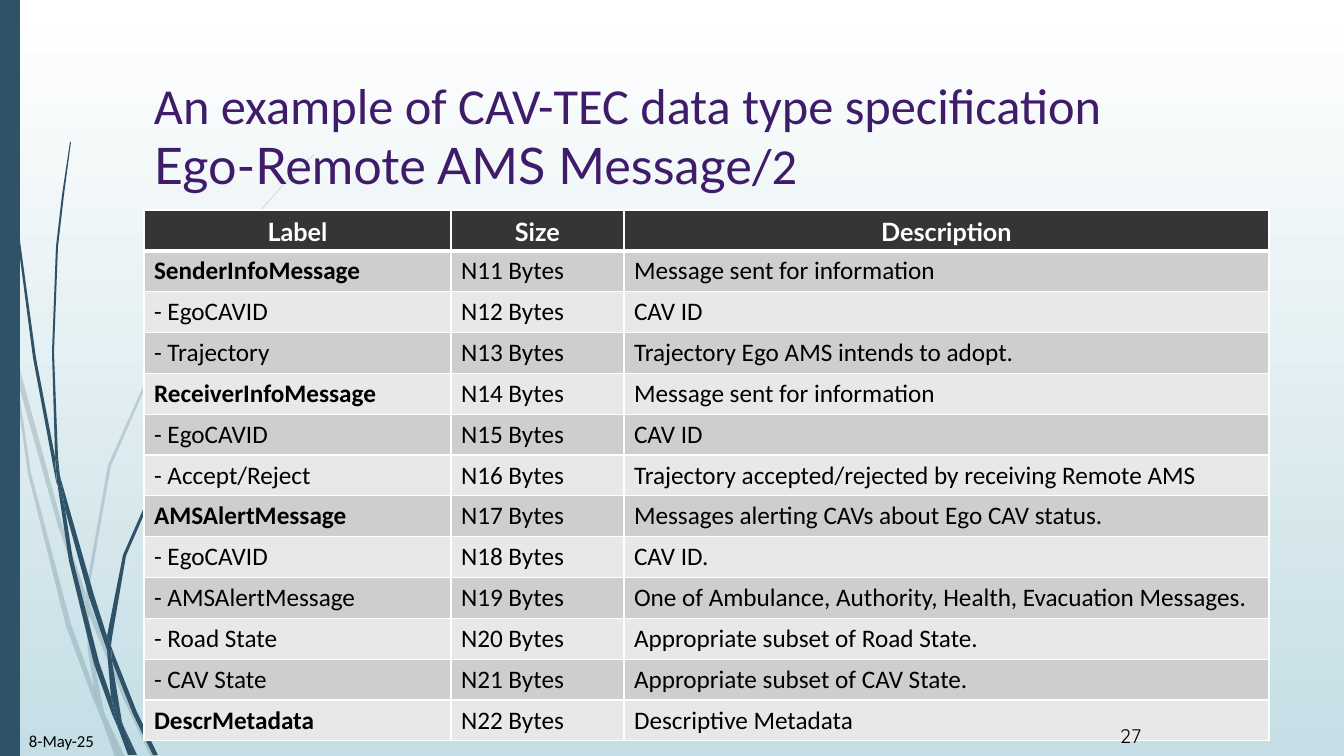
from lxml.etree import SubElement
from pptx import Presentation
from pptx.dml.color import RGBColor
from pptx.enum.shapes import MSO_SHAPE
from pptx.enum.text import MSO_ANCHOR, PP_ALIGN
from pptx.oxml import parse_xml
from pptx.oxml.ns import nsdecls, qn
from pptx.util import Pt

PX = 914400 / 100.8
THEME = {
    "teal": "2E5369", "sky": "C5DEE5", "white": "FFFFFF", "black": "000000",
    "title": "3F1C6A", "header": "353535", "bands": ("CECECE", "E8E8E8"),
    "body_font": "Calibri", "head_font": "Lato", "number_font": "Quicksand",
    "title_size": 36, "table_size": 18, "date_size": 12, "number_size": 14,
}


def px(length):
    return round(length * PX)


def style(span, font, size, color, bold=False):
    span.font.name = font
    span.font.size = Pt(size)
    span.font.bold = bold
    span.font.color.rgb = RGBColor.from_string(color)


deck = Presentation()
deck.slide_width, deck.slide_height = px(1344), px(756)
page = deck.slides.add_slide(deck.slide_layouts[6])

# Background fading from white to pale blue
backdrop = page.background.fill
backdrop.gradient()
backdrop.gradient_angle = 270
for stop, color, position in zip(backdrop.gradient_stops, ("white", "sky"), (0, 1)):
    stop.color.rgb = RGBColor.from_string(THEME[color])
    stop.position = position

# Grass outlines: a pale tuft behind a solid one
PALE_GRASS = [
    [(11, 353), (9, 325), (0, 284), (0, 301), (10, 347)],
    [(58, 526), (85, 604), (85, 591), (62, 524), (14, 348), (17, 379)],
    [(93, 612), (89, 601), (89, 615), (124, 700), (151, 757), (156, 757), (128, 698)],
    [(120, 757), (125, 757), (106, 717)],
    [(94, 688), (71, 624), (31, 473), (17, 379), (11, 353), (28, 474), (66, 626),
     (93, 699), (102, 720), (100, 713)],
    [(85, 604), (88, 651), (94, 688), (97, 698), (106, 717), (104, 712), (92, 651),
     (89, 615), (89, 613)],
    [(89, 589), (111, 466), (161, 352), (231, 247), (270, 200), (292, 176), (314, 155),
     (314, 154), (291, 176), (270, 199), (230, 246), (159, 351), (108, 465), (86, 589),
     (86, 591), (89, 601)],
    [(102, 720), (115, 757), (120, 757)],
    [(89, 613), (89, 615), (89, 601), (86, 591), (85, 604)],
    [(97, 698), (94, 688), (100, 713), (102, 720), (120, 757), (106, 717)],
]
SOLID_GRASS = [
    [(7, 111), (17, 235), (33, 358), (56, 481), (57, 485), (55, 461), (55, 457),
     (36, 358), (19, 234), (8, 110), (5, 48), (4, 0), (3, 0), (4, 48)],
    [(89, 597), (107, 650), (107, 638), (107, 636), (94, 595), (60, 476), (65, 509)],
    [(114, 654), (111, 646), (112, 661), (133, 714), (153, 755), (158, 755), (137, 712)],
    [(111, 697), (99, 662), (73, 560), (65, 509), (57, 481), (69, 561), (94, 664),
     (112, 714), (118, 728), (117, 723)],
    [(60, 476), (58, 457), (54, 352), (58, 247), (64, 195), (71, 142), (70, 142),
     (62, 195), (56, 247), (52, 352), (55, 453)],
    [(134, 755), (137, 755), (123, 725)],
    [(57, 481), (65, 509), (60, 476), (55, 453), (55, 457)],
    [(112, 638), (126, 556), (159, 480), (207, 409), (233, 377), (247, 362), (263, 347),
     (262, 347), (247, 361), (233, 376), (206, 408), (157, 478), (123, 555), (107, 636),
     (111, 646)],
    [(118, 728), (128, 755), (132, 755)],
    [(107, 650), (111, 697), (117, 712), (123, 725), (122, 722), (112, 661), (110, 656)],
    [(107, 650), (110, 656), (112, 661), (111, 646), (107, 636), (107, 638)],
    [(117, 712), (111, 697), (117, 723), (118, 728), (131, 755), (134, 755), (123, 725)],
]
for outlines, opacity in ((PALE_GRASS, 20), (SOLID_GRASS, 100)):
    tuft = page.shapes.add_group_shape()
    for outline in outlines:
        builder = tuft.shapes.build_freeform(*outline[0], scale=PX)
        builder.add_line_segments(outline[1:], close=True)
        blade = builder.convert_to_shape()
        blade.shadow.inherit = False
        blade.line.fill.background()
        blade.fill.solid()
        blade.fill.fore_color.rgb = RGBColor.from_string(THEME["teal"])
        if opacity < 100:
            tint = blade.fill._xPr.find(qn("a:solidFill"))[0]
            SubElement(tint, qn("a:alpha")).set("val", str(opacity * 1000))

# Side bar
bar = page.shapes.add_shape(MSO_SHAPE.RECTANGLE, 0, 0, px(20), px(756))
bar.shadow.inherit = False
bar.fill.solid()
bar.fill.fore_color.rgb = RGBColor.from_string(THEME["teal"])
bar.line.fill.background()

# Title
title = page.shapes.add_textbox(px(144), px(69), px(1125), px(141)).text_frame
title.word_wrap = True
title.vertical_anchor = MSO_ANCHOR.MIDDLE
title.margin_bottom = px(15)
para = title.paragraphs[0]
para.text = "An example of CAV-TEC data type specification\v"
for text in ("Ego-Remote AMS Message", "/2"):
    para.add_run().text = text
for span, font in zip(para.runs, ("body_font", "head_font", "body_font")):
    style(span, THEME[font], THEME["title_size"], THEME["title"])

# Message table
ROWS = [
    ("Label", "Size", "Description"),
    ("SenderInfoMessage", "N11 Bytes", "Message sent for information"),
    ("- EgoCAVID", "N12 Bytes", "CAV ID"),
    ("- Trajectory", "N13 Bytes", "Trajectory Ego AMS intends to adopt."),
    ("ReceiverInfoMessage", "N14 Bytes", "Message sent for information"),
    ("- EgoCAVID", "N15 Bytes", "CAV ID"),
    ("- Accept/Reject", "N16 Bytes", "Trajectory accepted/rejected by receiving Remote AMS"),
    ("AMSAlertMessage", "N17 Bytes", "Messages alerting CAVs about Ego CAV status."),
    ("- EgoCAVID", "N18 Bytes", "CAV ID."),
    ("- AMSAlertMessage", "N19 Bytes",
     "One of Ambulance, Authority, Health, Evacuation Messages."),
    ("- Road State", "N20 Bytes", "Appropriate subset of Road State."),
    ("- CAV State", "N21 Bytes", "Appropriate subset of CAV State."),
    ("DescrMetadata", "N22 Bytes", "Descriptive Metadata"),
]
table = page.shapes.add_table(
    len(ROWS), 3, px(144), px(210), px(1125), px(531)).table
for column, width in zip(table.columns, (307, 173, 645)):
    column.width = px(width)
for row, texts in enumerate(ROWS):
    is_header = row == 0
    for column, text in enumerate(texts):
        cell = table.cell(row, column)
        cell.vertical_anchor = MSO_ANCHOR.MIDDLE
        cell.fill.solid()
        fill = THEME["header"] if is_header else THEME["bands"][(row - 1) % 2]
        cell.fill.fore_color.rgb = RGBColor.from_string(fill)
        cell.text_frame.text = text
        para = cell.text_frame.paragraphs[0]
        if is_header:
            cell.margin_left = cell.margin_right = px(1)
            cell.margin_top = cell.margin_bottom = px(1)
            para.alignment = PP_ALIGN.CENTER
            para.line_spacing = 1.07
            para.space_after = Pt(8)
        is_group = column == 0 and not text.startswith("-")
        style(para.runs[0], THEME["head_font" if is_header else "body_font"],
              THEME["table_size"], THEME["white" if is_header else "black"],
              is_header or is_group)
        # White rules, thicker below the header
        for index, side in enumerate("LRTB"):
            weight = 3 if (row, side) in ((0, "B"), (1, "T")) else 1
            rule = parse_xml(
                f'<a:ln{side} {nsdecls("a")} w="{Pt(weight)}"><a:solidFill>'
                f'<a:srgbClr val="{THEME["white"]}"/></a:solidFill></a:ln{side}>')
            cell._tc.get_or_add_tcPr().insert(index, rule)

# Date and page number
FOOTERS = [
    ("8-May-25", (19, 726, 110, 40), 5, "body_font", "date_size"),
    ("27", (1110, 724, 61, 5), 0, "number_font", "number_size"),
]
for text, frame, top_margin, font, size in FOOTERS:
    box = page.shapes.add_textbox(*map(px, frame)).text_frame
    box.word_wrap = True
    box.margin_top = px(top_margin)
    box.text = text
    style(box.paragraphs[0].runs[0], THEME[font], THEME[size], THEME["black"])

deck.save("out.pptx")
